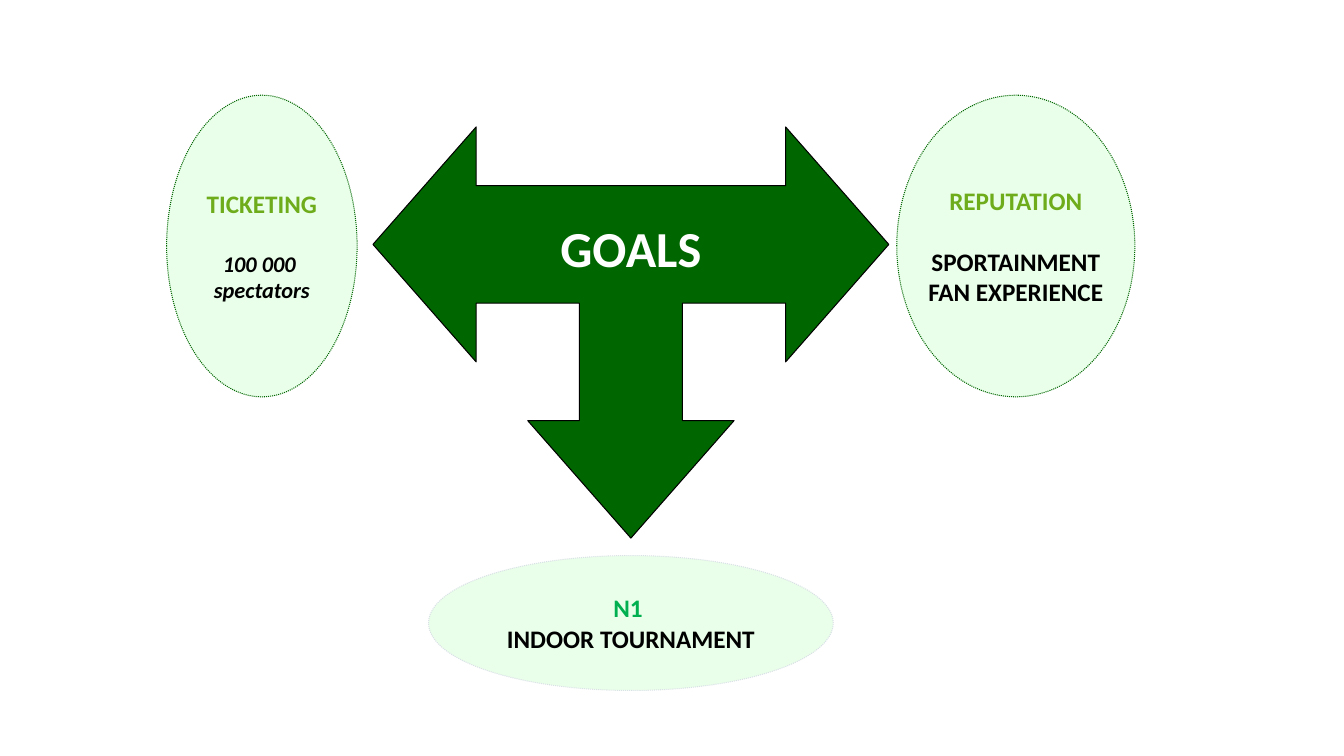
"""Build a slide with a three-way arrow pointing from the goals to three ovals."""
from lxml import etree
from pptx import Presentation
from pptx.dml.color import RGBColor
from pptx.enum.dml import MSO_LINE
from pptx.enum.shapes import MSO_SHAPE
from pptx.enum.text import MSO_ANCHOR, PP_ALIGN
from pptx.oxml.ns import qn
from pptx.util import Cm, Pt

OVAL = MSO_SHAPE.OVAL
DOTTED = MSO_LINE.ROUND_DOT
MIDDLE = MSO_ANCHOR.MIDDLE
CENTER = PP_ALIGN.CENTER
DARK_GREEN, PALE_GREEN, LIME, GREEN = "006600", "CCFFCC", "6EAC1C", "00B050"
BLACK, WHITE, GREY = "000000", "FFFFFF", "D9E0E6"


def style_shape(shape, fill, line):
    """Set the fill, the outline and the text frame of a shape."""
    shape.shadow.inherit = False
    shape.fill.solid()
    shape.fill.fore_color.rgb = RGBColor.from_string(fill)
    shape.line.color.rgb = RGBColor.from_string(line)
    shape.line.width = Pt(0.75)
    shape.text_frame.vertical_anchor = MIDDLE
    shape.text_frame.word_wrap = False


def write_line(paragraph, text, size, color, italic=False, gap=0):
    """Write one centred bold line, with a gap in points above it."""
    paragraph.alignment = CENTER
    if gap:
        paragraph.space_before = Pt(gap)
    run = paragraph.add_run()
    run.text = text
    run.font.name = "Calibri"
    run.font.size = Pt(size)
    run.font.bold = True
    run.font.italic = italic
    run.font.color.rgb = RGBColor.from_string(color)


presentation = Presentation()
presentation.slide_width = Cm(33.87)
presentation.slide_height = Cm(19.05)
slide = presentation.slides.add_slide(presentation.slide_layouts[6])

right_half = [(2, 5), (1, 5), (1, 3), (3, 3), (3, 4), (5, 2), (3, 0), (3, 1)]
left_half = [(-x, y) for x, y in reversed(right_half)]
builder = slide.shapes.build_freeform(0, 7, scale=(Cm(1.3), Cm(1.48)))
builder.add_line_segments(right_half + left_half, close=True)
arrow = builder.convert_to_shape(Cm(15.9), Cm(3.2))
style_shape(arrow, DARK_GREEN, BLACK)
arrow.text_frame.margin_top = 0
arrow.text_frame.margin_bottom = Cm(4.3)
write_line(arrow.text_frame.paragraphs[0], "GOALS", 36, WHITE)

ovals = [
    (10.8, 14, 10.2, 3.4, GREY,
     [("N1 ", 18, GREEN), ("INDOOR TOURNAMENT", 18, BLACK)]),
    (4.2, 2.4, 4.8, 7.6, DARK_GREEN,
     [("TICKETING", 18, LIME), ("100 000 ", 16, BLACK, True, 22),
      ("spectators", 16, BLACK, True)]),
    (22.6, 2.4, 6, 7.6, DARK_GREEN,
     [("REPUTATION", 18, LIME), ("SPORTAINMENT", 18, BLACK, False, 22),
      ("FAN EXPERIENCE", 18, BLACK)]),
]
for left, top, width, height, outline, lines in ovals:
    oval = slide.shapes.add_shape(OVAL, Cm(left), Cm(top), Cm(width), Cm(height))
    style_shape(oval, PALE_GREEN, outline)
    oval.line.dash_style = DOTTED
    fill_color = oval.fill._xPr.find(qn("a:solidFill"))[0]
    etree.SubElement(fill_color, qn("a:alpha"), val="40000")
    frame = oval.text_frame
    for index, line in enumerate(lines):
        paragraph = frame.add_paragraph() if index else frame.paragraphs[0]
        write_line(paragraph, *line)

presentation.save("out.pptx")
